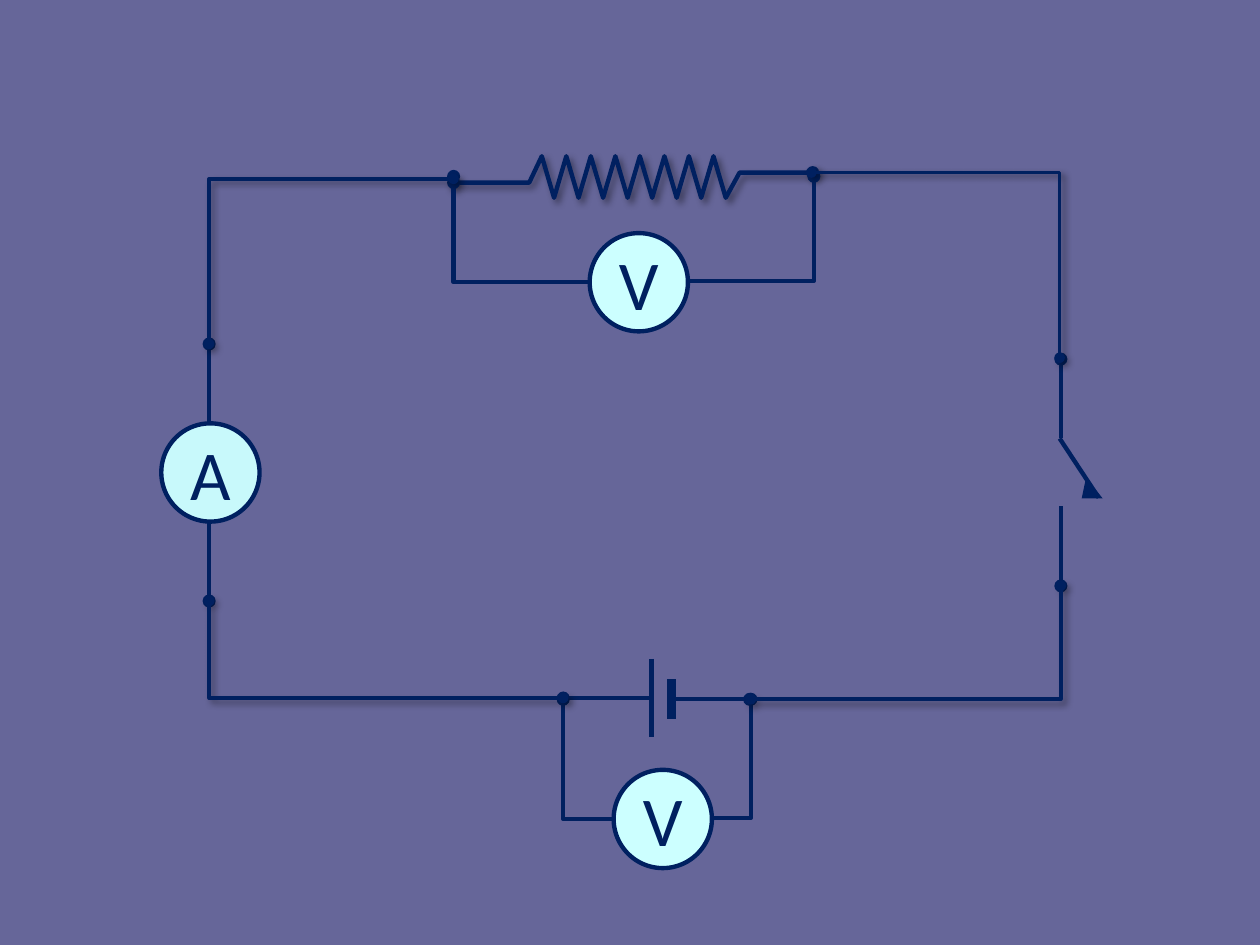
from dataclasses import dataclass

from pptx import Presentation
from pptx.dml.color import RGBColor
from pptx.enum.shapes import MSO_CONNECTOR, MSO_SHAPE
from pptx.enum.text import MSO_ANCHOR, PP_ALIGN
from pptx.oxml.ns import qn
from pptx.oxml.xmlchemy import OxmlElement
from pptx.util import Inches, Pt

STRAIGHT, ELBOW = MSO_CONNECTOR.STRAIGHT, MSO_CONNECTOR.ELBOW
OVAL, TRIANGLE = MSO_SHAPE.OVAL, MSO_SHAPE.ISOSCELES_TRIANGLE
MIDDLE, CENTER = MSO_ANCHOR.MIDDLE, PP_ALIGN.CENTER


@dataclass(frozen=True)
class Theme:
    background: RGBColor = RGBColor(0x66, 0x66, 0x99)
    ink: RGBColor = RGBColor(0x00, 0x20, 0x60)
    meter: RGBColor = RGBColor(0xCC, 0xFF, 0xFF)
    font: str = "Calibri"
    letter_size: float = 40
    part_line: float = 2.5
    wire_line: float = 2
    plate_line: float = 5.5
    meter_size: float = 0.78


THEME = Theme()


def add_xml(parent, tag, **attributes):
    child = OxmlElement(tag)
    for name, value in attributes.items():
        child.set(name, str(value))
    parent.append(child)
    return child


def set_line(shape, width, head=False, tail=False, shadow=False):
    """Ink line with optional oval ends and a soft shadow."""
    shape.line.color.rgb = THEME.ink
    shape.line.width = Pt(width)
    properties = shape.element.spPr
    line = properties.find(qn("a:ln"))
    for tag, wanted in (("a:headEnd", head), ("a:tailEnd", tail)):
        if wanted:
            add_xml(line, tag, type="oval")
    effects = add_xml(properties, "a:effectLst")
    if shadow:
        outer = add_xml(effects, "a:outerShdw", blurRad=Pt(4), dist=Pt(3),
                        dir=45 * 60000, algn="tl", rotWithShape=0)
        color = add_xml(outer, "a:srgbClr", val="000000")
        add_xml(color, "a:alpha", val=40000)


def add_line(shapes, start, end, width=THEME.part_line, kind=STRAIGHT, **ends):
    points = [Inches(value) for value in (*start, *end)]
    connector = shapes.add_connector(kind, *points)
    set_line(connector, width, **ends)
    return connector


def add_corner(shapes, start, end, width=THEME.part_line, **ends):
    """Connector that runs vertically from start, then horizontally to end."""
    connector = add_line(shapes, start, end, width, ELBOW, **ends)
    guides = connector.element.spPr.find(qn("a:prstGeom")).find(qn("a:avLst"))
    add_xml(guides, "a:gd", name="adj1", fmla="val 0")


def add_meter(shapes, left, top, letter, opacity=100):
    size = Inches(THEME.meter_size)
    meter = shapes.add_shape(OVAL, Inches(left), Inches(top), size, size)
    meter.fill.solid()
    meter.fill.fore_color.rgb = THEME.meter
    if opacity < 100:
        color = meter.element.spPr.find(qn("a:solidFill"))[0]
        add_xml(color, "a:alpha", val=opacity * 1000)
    set_line(meter, THEME.part_line)
    frame = meter.text_frame
    frame.margin_left = frame.margin_right = 0
    frame.margin_top = frame.margin_bottom = 0
    frame.vertical_anchor = MIDDLE
    frame.text = letter
    paragraph = frame.paragraphs[0]
    paragraph.alignment = CENTER
    font = paragraph.runs[0].font
    font.name = THEME.font
    font.size = Pt(THEME.letter_size)
    font.color.rgb = THEME.ink


def draw_battery(shapes, left, top, width, height):
    middle = top + height / 2
    long_plate, short_plate = left + 0.7, left + 0.86
    add_line(shapes, (left, middle), (long_plate, middle), head=True)
    add_line(shapes, (short_plate, middle + 0.01), (left + width, middle + 0.01),
             tail=True)
    add_line(shapes, (long_plate, top), (long_plate, top + height))
    add_line(shapes, (short_plate, top + 0.16), (short_plate, top + 0.48),
             THEME.plate_line)


def draw_ammeter(shapes, left, top, width, height):
    center = left + width / 2 - 0.01
    lead = (height - THEME.meter_size) / 2
    add_line(shapes, (center, top + height), (center, top + height - lead), head=True)
    add_line(shapes, (center, top + lead), (center, top), tail=True)
    add_meter(shapes, left, top + lead, "A", opacity=96)


def draw_switch(shapes, left, top, height):
    lead = 0.63
    add_line(shapes, (left, top), (left, top + lead), head=True)
    add_line(shapes, (left, top + height - lead), (left, top + height), tail=True)
    add_line(shapes, (left - 0.01, top + lead), (left + 0.3, top + 1.1))
    tip = shapes.add_shape(TRIANGLE, Inches(left + 0.11), Inches(top + 1),
                           Inches(0.21), Inches(0.13))
    tip.rotation = 230.8
    tip.fill.solid()
    tip.fill.fore_color.rgb = THEME.ink
    tip.line.fill.background()
    tip.shadow.inherit = False


def draw_resistor(shapes, left, top, width, height):
    teeth = 16
    first, last = left + 0.7, left + 2.16
    step = (last - first) / (teeth - 1)
    zigzag = [(first + i * step, top + (height if i % 2 else 0)) for i in range(teeth)]
    points = [(left, top + 0.21), (left + 0.6, top + 0.21), *zigzag,
              (left + 2.27, top + 0.13), (left + width, top + 0.13)]
    start, *rest = [(Inches(x), Inches(y)) for x, y in points]
    builder = shapes.build_freeform(*start)
    builder.add_line_segments(rest, close=False)
    resistor = builder.convert_to_shape()
    resistor.fill.background()
    set_line(resistor, THEME.part_line, head=True, tail=True, shadow=True)


def draw_voltmeter(shapes, left, top, width, height, meter_left):
    """Meter bridging two nodes at the top corners of its box."""
    bottom = top + height
    add_corner(shapes, (left, top), (meter_left, bottom), head=True)
    add_corner(shapes, (left + width, top),
               (meter_left + THEME.meter_size, bottom - 0.01), head=True)
    add_meter(shapes, meter_left, bottom - THEME.meter_size / 2, "V")


def draw_wires(shapes, left, top, right, bottom):
    corners = [
        ((left, 4.77), (4.47, bottom)),
        ((left, 2.73), (3.6, top + 0.05)),
        ((right - 0.01, 2.84), (6.44, top)),
        ((right, 4.65), (5.96, bottom + 0.01)),
    ]
    for start, end in corners:
        add_corner(shapes, start, end, THEME.wire_line,
                   head=True, tail=True, shadow=True)


def draw_circuit(slide):
    def group():
        return slide.shapes.add_group_shape().shapes

    draw_battery(group(), 4.47, 5.23, 1.48, 0.62)
    draw_ammeter(group(), 1.28, 2.73, 0.78, 2.04)
    draw_switch(group(), 8.42, 2.85, 1.8)
    draw_resistor(slide.shapes, 3.6, 1.24, 2.85, 0.33)
    draw_voltmeter(group(), 3.6, 1.4, 2.86, 0.84, meter_left=4.68)
    draw_voltmeter(group(), 4.47, 5.55, 1.49, 0.95, meter_left=4.87)
    draw_wires(slide.shapes, 1.66, 1.37, 8.42, 5.54)


def main():
    presentation = Presentation()
    presentation.slide_width = Inches(10)
    presentation.slide_height = Inches(7.5)
    slide = presentation.slides.add_slide(presentation.slide_layouts[6])
    slide.background.fill.solid()
    slide.background.fill.fore_color.rgb = THEME.background
    draw_circuit(slide)
    presentation.save("out.pptx")


if __name__ == "__main__":
    main()
